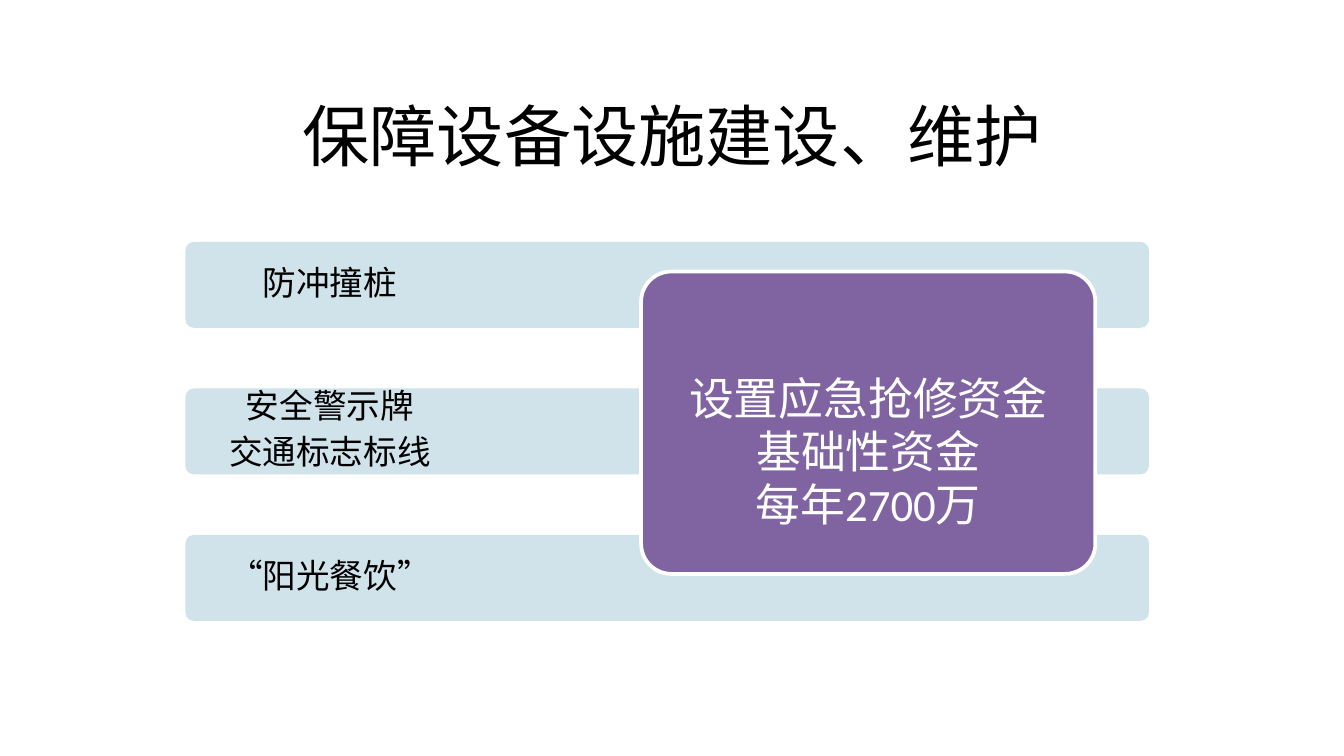
from dataclasses import dataclass

from pptx import Presentation
from pptx import util as u
from pptx.dml.color import RGBColor
from pptx.enum import shapes, text
from pptx.oxml.ns import qn
from pptx.slide import Slide
from pptx.text.text import TextFrame

CJK = "Noto Sans CJK SC"
BAR_LEFT, BAR_TOP, BAR_STEP = 1.38, 1.8, 1.09
BAR_WIDTH, BAR_HEIGHT, LABEL_WIDTH = 7.17, 0.64, 2.15


@dataclass
class Box:
    left: float
    top: float
    width: float
    height: float

    def lengths(self) -> list[u.Length]:
        return [u.Inches(v) for v in (self.left, self.top, self.width, self.height)]


@dataclass
class Bar:
    lines: list[str]
    spacing: float | u.Length = 0.9


BARS = [
    Bar(["防冲撞桩"]),
    Bar(["安全警示牌", "交通标志标线"], u.Pt(18)),
    Bar(["“阳光餐饮”"]),
]
CARD_LINES = ["设置应急抢修资金", "基础性资金", "每年2700万"]


def rgb(value: str) -> RGBColor:
    return RGBColor.from_string(value)


def write(tf: TextFrame, lines: list[str], *, size: float, color: str = "000000",
          font: str = CJK, spacings: list | None = None, after: float = 0,
          inset: float = 0.1) -> None:
    tf.word_wrap = True
    tf.auto_size = text.MSO_AUTO_SIZE.NONE
    tf.vertical_anchor = text.MSO_ANCHOR.MIDDLE
    tf.margin_left = tf.margin_right = u.Inches(inset)
    tf.margin_top = tf.margin_bottom = u.Inches(inset)
    for i, line in enumerate(lines):
        p = tf.paragraphs[0] if i == 0 else tf.add_paragraph()
        p.alignment = text.PP_ALIGN.CENTER
        p.space_after = u.Pt(after)
        if spacings:
            p.line_spacing = spacings[i]
        r = p.add_run()
        r.text = line
        r.font.size = u.Pt(size)
        r.font.name = font
        r.font.color.rgb = rgb(color)
        ea = r.font._element.makeelement(qn("a:ea"), {"typeface": CJK})
        r.font._element.find(qn("a:latin")).addnext(ea)


def add_panel(s: Slide, box: Box, fill: str, line: str | None = None) -> None:
    sp = s.shapes.add_shape(shapes.MSO_SHAPE.ROUNDED_RECTANGLE, *box.lengths())
    sp.adjustments[0] = 0.1
    sp.shadow.inherit = False
    sp.fill.solid()
    sp.fill.fore_color.rgb = rgb(fill)
    if line:
        sp.line.color.rgb = rgb(line)
        sp.line.width = u.Pt(2)
    else:
        sp.line.fill.background()


def add_text(s: Slide, box: Box, lines: list[str], **fmt) -> None:
    sp = s.shapes.add_textbox(*box.lengths())
    write(sp.text_frame, lines, **fmt)


def add_bar(s: Slide, bar: Bar, top: float) -> None:
    add_panel(s, Box(BAR_LEFT, top, BAR_WIDTH, BAR_HEIGHT), "D0E3EA")
    add_text(s, Box(BAR_LEFT, top, LABEL_WIDTH, BAR_HEIGHT), bar.lines, size=18,
             spacings=[bar.spacing] * len(bar.lines), after=6.3, inset=0.14)


def main() -> None:
    prs = Presentation()
    prs.slide_width = u.Inches(10)
    prs.slide_height = u.Inches(10 * 9 / 16)
    s = prs.slides.add_slide(prs.slide_layouts[5])

    title = s.shapes.title
    title.left, title.top, title.width, title.height = Box(0.75, 0.69, 8.5, 0.63).lengths()
    write(title.text_frame, ["保障设备设施建设、维护"], size=36, inset=0.05)

    for i, bar in reversed(list(enumerate(BARS))):
        add_bar(s, bar, BAR_TOP + i * BAR_STEP)

    add_panel(s, Box(4.77, 2.02, 3.38, 2.25), "8064A2", line="FFFFFF")
    add_text(s, Box(4.84, 2.09, 3.24, 2.12), CARD_LINES, size=24, color="FFFFFF",
             font="Calibri", spacings=[2.0, u.Pt(20), u.Pt(20)], after=8.4)

    prs.save("out.pptx")


if __name__ == "__main__":
    main()
